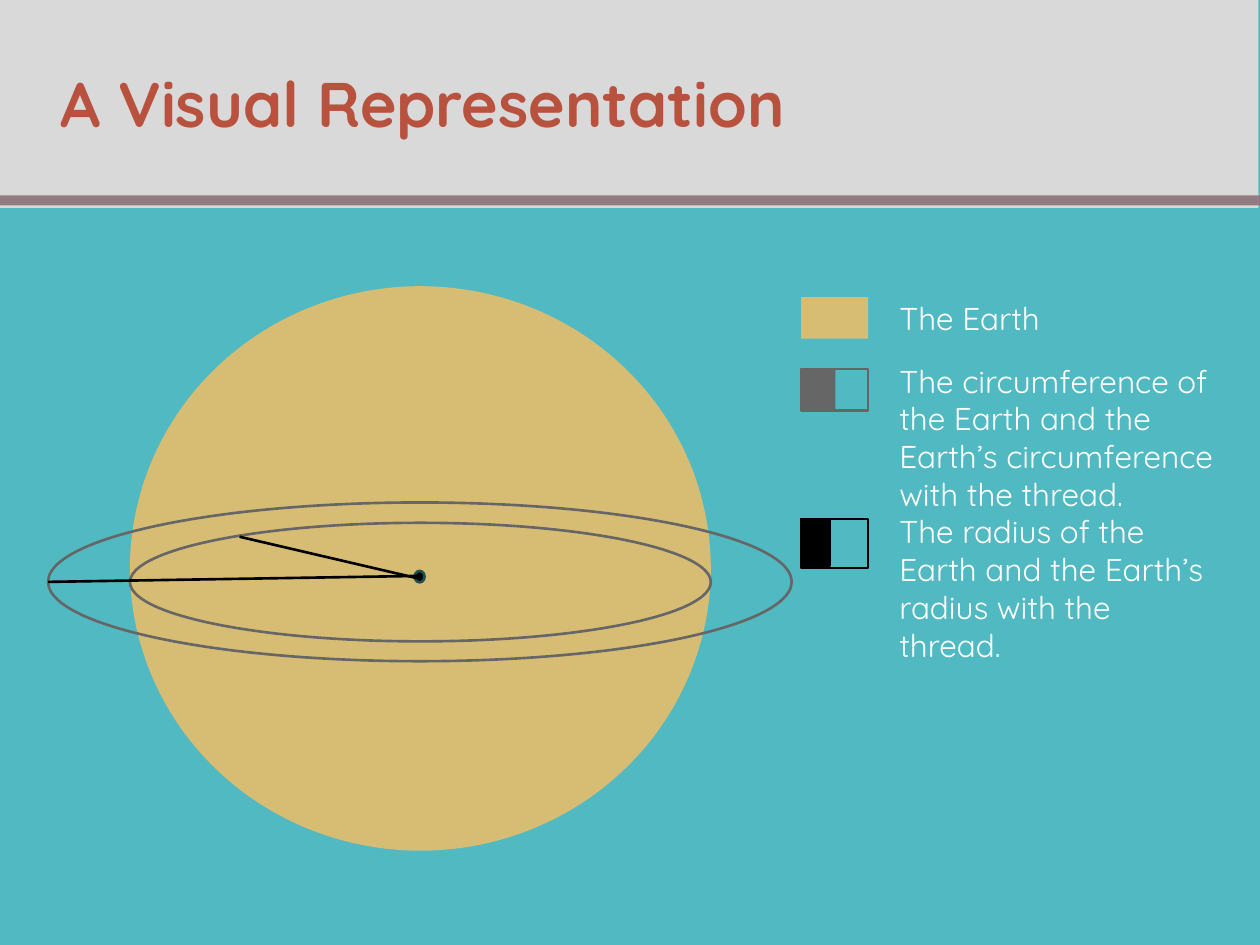
from lxml import etree
from pptx import Presentation
from pptx.dml.color import RGBColor
from pptx.enum import shapes, text
from pptx.oxml.ns import qn
from pptx.util import Cm, Pt

THEME = {
    "font": "Quicksand", "title_size": 36, "legend_size": 18, "line": 1.5,
    "background": "50B9C1", "header": "D9D9D9", "title": "B8523F",
    "rule": "927C82", "earth": "D7BD74", "thread": "666666",
    "radius": "000000", "center_edge": "1E5155", "legend": "FFFFFF",
}

TITLE = "A Visual Representation"
HEADER_BOX = (-0.03, -0.05, 25.4, 4.24)
RULE_BOX = (-0.1, 3.94, 25.53, 0.2)

# box in cm, fill, outline
GLOBE = [
    ((2.62, 5.77, 11.71, 11.38), "earth", None),
    ((2.62, 10.54, 11.71, 2.39), None, "thread"),
    ((0.97, 10.13, 14.99, 3.2), None, "thread"),
    ((8.36, 11.51, 0.2, 0.23), "radius", "center_edge"),
]
RADII = [((8.43, 11.66), (4.83, 10.82)), ((8.43, 11.61), (0.97, 11.73))]

KEY_LEFT, KEY_WIDTH, LABEL_LEFT = 16.15, 1.35, 17.88
# label, label (top, width, height), key (top, height),
# key fill, key outline, filled part (width, height, outline)
LEGEND = [
    ("The Earth", (5.77, 10.16, 1.27), (5.99, 0.84), "earth", None, None),
    ("The circumference of the Earth and the Earth’s circumference with the thread.",
     (7.04, 7.42, 2.36), (7.44, 0.84), None, "thread", (0.69, 0.84, None)),
    ("The radius of the Earth and the Earth’s radius with the thread.",
     (10.08, 6.78, 1.47), (10.46, 0.99), None, "radius", (0.58, 0.94, "radius")),
]


def color(name):
    return RGBColor.from_string(THEME[name])


def cm(values):
    return [Cm(value) for value in values]


def add_figure(slide, kind, box, fill=None, outline=None):
    figure = slide.shapes.add_shape(kind, *cm(box))
    figure.shadow.inherit = False
    if fill:
        figure.fill.solid()
        figure.fill.fore_color.rgb = color(fill)
    else:
        figure.fill.background()
    if outline:
        figure.line.color.rgb = color(outline)
        figure.line.width = Pt(THEME["line"])
    else:
        figure.line.fill.background()


def write(frame, words, role, bold=False, left=0.25):
    frame.word_wrap = True
    frame.auto_size = text.MSO_AUTO_SIZE.NONE
    frame.margin_left = Cm(left)
    frame.margin_right = frame.margin_top = frame.margin_bottom = Cm(0.25)
    paragraph = frame.paragraphs[0]
    paragraph.alignment = text.PP_ALIGN.LEFT
    run = paragraph.add_run()
    run.text = words
    run.font.name = THEME["font"]
    run.font.size = Pt(THEME[role + "_size"])
    run.font.bold = bold
    run.font.color.rgb = color(role)


def add_header(slide):
    title = slide.shapes.title
    title.left, title.top, title.width, title.height = cm(HEADER_BOX)
    title.fill.solid()
    title.fill.fore_color.rgb = color("header")
    title.text_frame.vertical_anchor = text.MSO_ANCHOR.MIDDLE
    write(title.text_frame, TITLE, "title", bold=True, left=1.25)
    add_figure(slide, shapes.MSO_SHAPE.RECTANGLE, RULE_BOX, "rule")


def add_globe(slide):
    for box, fill, outline in GLOBE:
        add_figure(slide, shapes.MSO_SHAPE.OVAL, box, fill, outline)
    for center, edge in RADII:
        radius = slide.shapes.add_connector(
            shapes.MSO_CONNECTOR.STRAIGHT, *cm(center + edge))
        radius.line.color.rgb = color("radius")
        radius.line.width = Pt(THEME["line"])
        etree.SubElement(radius._element.spPr, qn("a:effectLst"))


def add_legend(slide):
    rectangle = shapes.MSO_SHAPE.RECTANGLE
    for words, (label_top, width, height), (top, key_height), fill, outline, part in LEGEND:
        add_figure(slide, rectangle, (KEY_LEFT, top, KEY_WIDTH, key_height), fill, outline)
        if part:
            part_width, part_height, part_outline = part
            add_figure(slide, rectangle, (KEY_LEFT, top, part_width, part_height),
                       outline, part_outline)
        label = slide.shapes.add_textbox(*cm((LABEL_LEFT, label_top, width, height)))
        write(label.text_frame, words, "legend")


def main():
    deck = Presentation()
    deck.slide_width, deck.slide_height = Cm(25.4), Cm(19.05)
    slide = deck.slides.add_slide(deck.slide_layouts[5])
    slide.background.fill.solid()
    slide.background.fill.fore_color.rgb = color("background")
    add_header(slide)
    add_globe(slide)
    add_legend(slide)
    deck.save("out.pptx")


if __name__ == "__main__":
    main()
